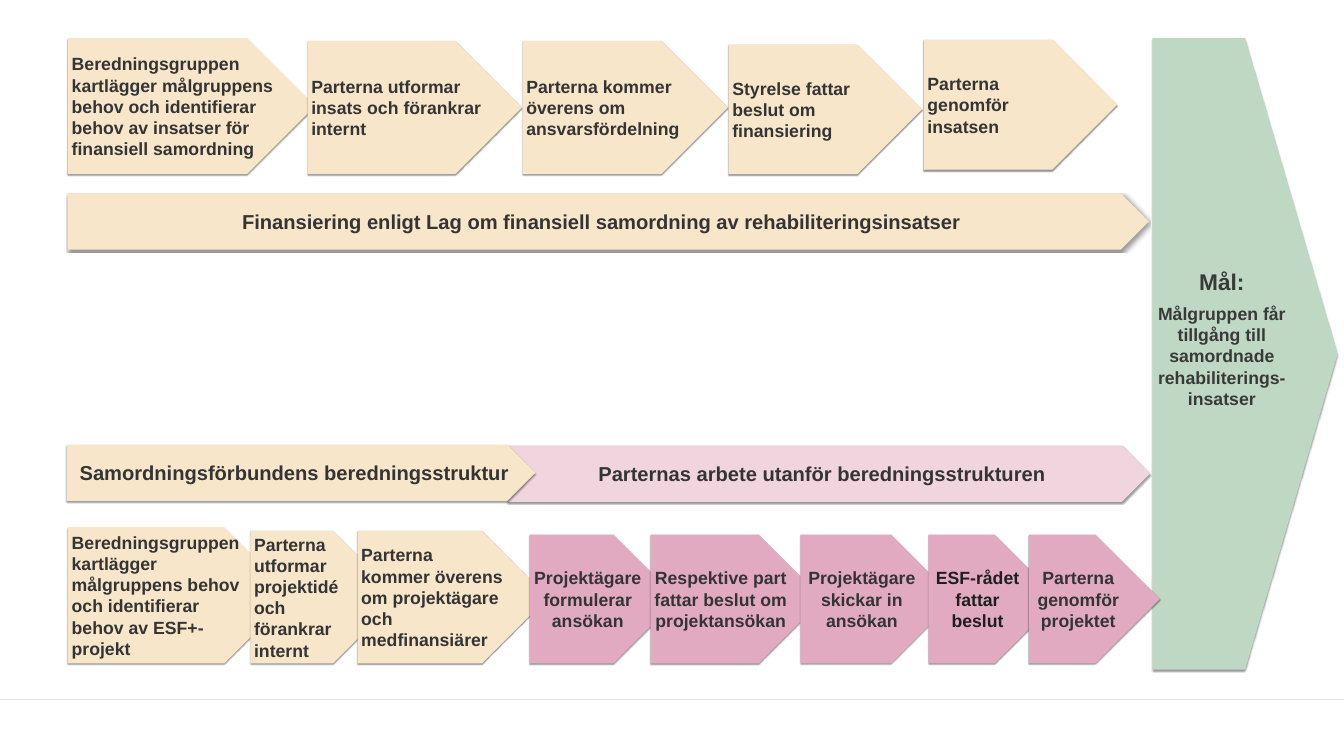
"""Build a slide showing two parallel process flows leading to a shared goal."""
from dataclasses import dataclass

from lxml import etree
from pptx import Presentation
from pptx.dml.color import RGBColor
from pptx.enum.shapes import MSO_CONNECTOR, MSO_SHAPE
from pptx.enum.text import MSO_ANCHOR, PP_ALIGN
from pptx.oxml.ns import qn
from pptx.util import Inches, Pt

PENTAGON = MSO_SHAPE.PENTAGON
STRAIGHT = MSO_CONNECTOR.STRAIGHT
MIDDLE = MSO_ANCHOR.MIDDLE
LEFT, CENTER = PP_ALIGN.LEFT, PP_ALIGN.CENTER

COLORS = {
    "beige": "F8E6CA",
    "rose": "E2AAC0",
    "pale rose": "F0D5DF",
    "green": "BFD8C4",
    "rule": "DBECDD",
    "text": "343434",
    "goal text": "393939",
    "dark text": "1E1E1E",
    "shadow": "000000",
}
FONT = "Arial"
SIDE_INSET, END_INSET = 0.04, 0.08


@dataclass
class Line:
    text: str
    size: int = 14


@dataclass
class Arrow:
    left: float
    top: float
    width: float
    height: float
    fill: str
    lines: list[Line]
    align: PP_ALIGN = LEFT
    color: str = "text"
    bottom_inset: float = END_INSET


def step(left: float, top: float, width: float, height: float, *texts: str) -> Arrow:
    """Describe a left-aligned beige step."""
    return Arrow(left, top, width, height, "beige", [Line(text) for text in texts])


def project_step(left: float, width: float, text: str, color: str = "text") -> Arrow:
    """Describe a centred rose step in the lower row."""
    return Arrow(left, 5.89, width, 1.42, "rose", [Line(text)], CENTER, color)


def banner(left: float, top: float, width: float, fill: str, text: str) -> Arrow:
    """Describe a long arrow that names a phase."""
    return Arrow(left, top, width, 0.62, fill, [Line(text, 16)], CENTER)


ARROWS = [
    step(0.75, 0.42, 2.72, 1.5, "Beredningsgruppen",
         "kartlägger målgruppens behov och identifierar behov av insatser för finansiell samordning"),
    step(0.75, 5.81, 2.47, 1.5, "Beredningsgruppen",
         "kartlägger målgruppens behov och identifierar behov av ESF+-projekt"),
    step(2.76, 5.85, 1.64, 1.46, "Parterna utformar projektidé och förankrar", "internt"),
    step(3.94, 5.85, 2.1, 1.46, "Parterna", "kommer överens om projektägare och medfinansiärer"),
    step(3.39, 0.45, 2.36, 1.47, "Parterna utformar insats och förankrar internt"),
    step(5.76, 0.45, 2.26, 1.47, "Parterna kommer överens om ansvarsfördelning"),
    step(8.03, 0.49, 2.13, 1.43, "Styrelse fattar beslut om finansiering"),
    Arrow(12.7, 0.42, 2.04, 6.96, "green",
          [Line("Mål:", 18), Line("Målgruppen får tillgång till samordnade rehabiliterings-insatser")],
          CENTER, "goal text", 0.42),
    step(10.18, 0.44, 2.13, 1.43, "Parterna genomför insatsen"),
    banner(0.75, 2.13, 11.91, "beige",
           "Finansiering enligt Lag om finansiell samordning av rehabiliteringsinsatser"),
    banner(5.6, 4.91, 7.07, "pale rose", "Parternas arbete utanför beredningsstrukturen"),
    banner(0.74, 4.9, 5.16, "beige", "Samordningsförbundens beredningsstruktur"),
    project_step(5.84, 1.63, "Projektägare formulerar ansökan"),
    project_step(7.17, 1.9, "Respektive part fattar beslut om projektansökan"),
    project_step(8.82, 1.71, "Projektägare skickar in ansökan"),
    project_step(10.23, 1.44, "ESF-rådet fattar beslut", "dark text"),
    project_step(11.34, 1.44, "Parterna genomför projektet"),
]


def rgb(name: str) -> RGBColor:
    """Look up a colour by name."""
    return RGBColor.from_string(COLORS[name])


def add_shadow(shape) -> None:
    """Give a shape a soft shadow straight below it."""
    shape.shadow.inherit = False
    effects = shape._element.spPr.find(qn("a:effectLst"))
    shadow = etree.SubElement(effects, qn("a:outerShdw"), blurRad=str(Pt(1)), dist=str(Pt(1)),
                              dir="5400000", rotWithShape="0")
    color = etree.SubElement(shadow, qn("a:srgbClr"), val=COLORS["shadow"])
    etree.SubElement(color, qn("a:alpha"), val="40000")


def draw_arrow(page, arrow: Arrow) -> None:
    """Draw one pentagon arrow with its text."""
    box = page.shapes.add_shape(PENTAGON, Inches(arrow.left), Inches(arrow.top),
                                Inches(arrow.width), Inches(arrow.height))
    box.fill.solid()
    box.fill.fore_color.rgb = rgb(arrow.fill)
    box.line.fill.background()
    add_shadow(box)
    frame = box.text_frame
    frame.word_wrap = True
    frame.vertical_anchor = MIDDLE
    frame.margin_left = frame.margin_right = Inches(SIDE_INSET)
    frame.margin_top = Inches(END_INSET)
    frame.margin_bottom = Inches(arrow.bottom_inset)
    for index, line in enumerate(arrow.lines):
        para = frame.add_paragraph() if index else frame.paragraphs[0]
        para.alignment = arrow.align
        para.space_after = Pt(6 if arrow.align == CENTER else 0)
        span = para.add_run()
        span.text = line.text
        span.font.name = FONT
        span.font.size = Pt(line.size)
        span.font.bold = True
        span.font.color.rgb = rgb(arrow.color)


def draw_footer_rule(page, width: int) -> None:
    """Draw the thin rule across the foot of the page."""
    rule = page.shapes.add_connector(STRAIGHT, 0, Inches(7.71), width, Inches(7.71))
    rule.line.color.rgb = rgb("rule")
    rule.line.width = Pt(1)
    etree.SubElement(rule._element.spPr, qn("a:effectLst"))


def main() -> None:
    """Build and save the deck."""
    deck = Presentation()
    deck.slide_width, deck.slide_height = Inches(14.81), Inches(8.33)
    page = deck.slides.add_slide(deck.slide_layouts[6])
    draw_footer_rule(page, deck.slide_width)
    for arrow in ARROWS:
        draw_arrow(page, arrow)
    deck.save("out.pptx")


if __name__ == "__main__":
    main()
